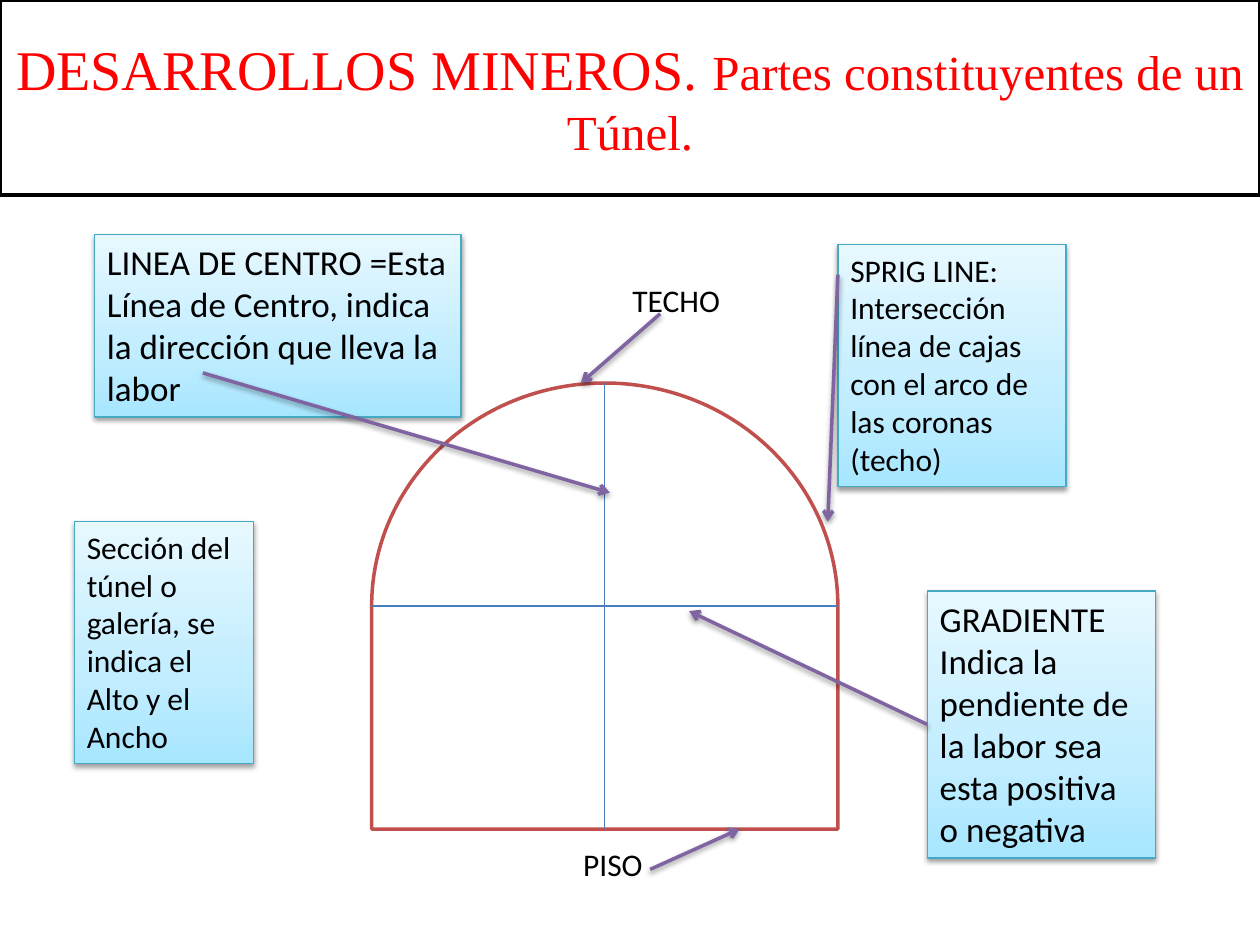
from lxml import etree
from pptx import Presentation
from pptx import util as u
from pptx.dml.color import RGBColor
from pptx.enum import shapes, text
from pptx.oxml import parse_xml
from pptx.oxml.ns import qn, nsdecls

BLACK = RGBColor(0x00, 0x00, 0x00)
WHITE = RGBColor(0xFF, 0xFF, 0xFF)
RED = RGBColor(0xFF, 0x00, 0x00)
TUNNEL_RED = RGBColor(0xC0, 0x50, 0x4D)
AXIS_BLUE = RGBColor(0x4B, 0x7E, 0xBC)
ARROW_PURPLE = RGBColor(0x80, 0x64, 0xA2)
BOX_BORDER = RGBColor(0x46, 0xAA, 0xC5)
BOX_STOPS = [
    (0, RGBColor(0xA7, 0xE6, 0xFF)),
    (35, RGBColor(0xC1, 0xED, 0xFF)),
    (100, RGBColor(0xE7, 0xF8, 0xFF)),
]


def add_effects(shape, shadow):
    """Replace the theme effects by a soft downward shadow or by none."""
    properties = shape._element.spPr
    effects = etree.SubElement(properties, qn("a:effectLst"))
    if shadow:
        effects.append(parse_xml(
            f'<a:outerShdw {nsdecls("a")} blurRad="{u.Pt(3.1)}" dist="{u.Pt(1.6)}" '
            'dir="5400000" rotWithShape="0"><a:srgbClr val="000000">'
            '<a:alpha val="38000"/></a:srgbClr></a:outerShdw>'))


def add_line(start, end, color, width):
    ends = [u.Inches(value) for value in (*start, *end)]
    line = slide.shapes.add_connector(shapes.MSO_CONNECTOR.STRAIGHT, *ends)
    line.line.color.rgb = color
    line.line.width = u.Pt(width)
    return line


presentation = Presentation()
presentation.slide_width = u.Inches(10)
presentation.slide_height = u.Inches(7.5)
slide = presentation.slides.add_slide(presentation.slide_layouts[6])

# Title
title = slide.shapes.add_shape(
    shapes.MSO_SHAPE.RECTANGLE, 0, 0, u.Inches(10), u.Inches(1.55))
title.shadow.inherit = False
title.fill.solid()
title.fill.fore_color.rgb = WHITE
title.line.color.rgb = BLACK
title.line.width = u.Pt(2)
title.text_frame.word_wrap = True
title.text_frame.vertical_anchor = text.MSO_ANCHOR.MIDDLE
paragraph = title.text_frame.paragraphs[0]
paragraph.alignment = text.PP_ALIGN.CENTER
paragraph.font.name = "Times New Roman"
paragraph.font.color.rgb = RED
for words, size in [("DESARROLLOS MINEROS. ", 32),
                    ("Partes constituyentes de un Túnel.", 28)]:
    run = paragraph.add_run()
    run.text = words
    run.font.size = u.Pt(size)

# Tunnel section
tunnel = slide.shapes.add_shape(
    shapes.MSO_SHAPE.FLOWCHART_DELAY,
    u.Inches(3.03), u.Inches(2.96), u.Inches(3.54), u.Inches(3.7))
tunnel.rotation = 270
tunnel.shadow.inherit = False
tunnel.fill.solid()
tunnel.fill.fore_color.rgb = WHITE
tunnel.line.color.rgb = TUNNEL_RED
tunnel.line.width = u.Pt(2)

# Centre line and gradient line
for start, end in [((4.8, 3.04), (4.8, 6.58)), ((2.95, 4.81), (6.65, 4.81))]:
    add_effects(add_line(start, end, AXIS_BLUE, 0.75), shadow=False)

# Explanation boxes
explanations = [
    ("LINEA DE CENTRO =Esta Línea de Centro, indica la dirección que lleva la labor",
     20, (0.75, 1.86, 2.91, 1.45)),
    ("Sección del túnel o galería, se indica el Alto y el Ancho",
     18, (0.59, 4.14, 1.42, 1.92)),
    ("SPRIG LINE: Intersección línea de cajas con el arco de las coronas (techo)",
     18, (6.65, 1.94, 1.81, 1.92)),
    ("GRADIENTE Indica la pendiente de la labor sea esta positiva o negativa",
     20, (7.36, 4.69, 1.81, 2.12)),
]
stops = "".join(
    f'<a:gs pos="{position * 1000}"><a:srgbClr val="{color}"/></a:gs>'
    for position, color in BOX_STOPS)
for words, size, place in explanations:
    box = slide.shapes.add_shape(
        shapes.MSO_SHAPE.RECTANGLE, *[u.Inches(value) for value in place])
    box._element.spPr.find(qn("a:prstGeom")).addnext(parse_xml(
        f'<a:gradFill {nsdecls("a")} rotWithShape="1"><a:gsLst>{stops}</a:gsLst>'
        '<a:lin ang="16200000" scaled="0"/></a:gradFill>'))
    box.line.color.rgb = BOX_BORDER
    box.line.width = u.Pt(0.75)
    add_effects(box, shadow=True)
    box.text_frame.word_wrap = True
    box.text_frame.vertical_anchor = text.MSO_ANCHOR.TOP
    paragraph = box.text_frame.paragraphs[0]
    paragraph.text = words
    paragraph.alignment = text.PP_ALIGN.LEFT
    paragraph.font.name = "Calibri"
    paragraph.font.size = u.Pt(size)
    paragraph.font.color.rgb = BLACK
gradient_box = box

# Roof and floor labels
for words, left, top, width in [("TECHO", 4.92, 2.18, 1.18), ("PISO", 4.53, 6.66, 1.07)]:
    label = slide.shapes.add_textbox(
        u.Inches(left), u.Inches(top), u.Inches(width), u.Inches(0.4))
    label.text_frame.word_wrap = True
    paragraph = label.text_frame.paragraphs[0]
    paragraph.text = words
    paragraph.font.name = "Calibri"
    paragraph.font.size = u.Pt(18)
    paragraph.font.color.rgb = BLACK

# Arrows from the texts to the tunnel; the last one leaves the gradient box
for start, end in [
    ((1.61, 2.96), (4.84, 3.91)),
    ((5.24, 2.49), (4.61, 3.04)),
    ((5.16, 6.9), (5.87, 6.58)),
    ((6.65, 2.18), (6.57, 4.14)),
    ((7.36, 5.75), (5.47, 4.85)),
]:
    arrow = add_line(start, end, ARROW_PURPLE, 2)
    etree.SubElement(arrow._element.spPr.find(qn("a:ln")), qn("a:tailEnd"), type="arrow")
    add_effects(arrow, shadow=True)
arrow.begin_connect(gradient_box, 1)

presentation.save("out.pptx")
